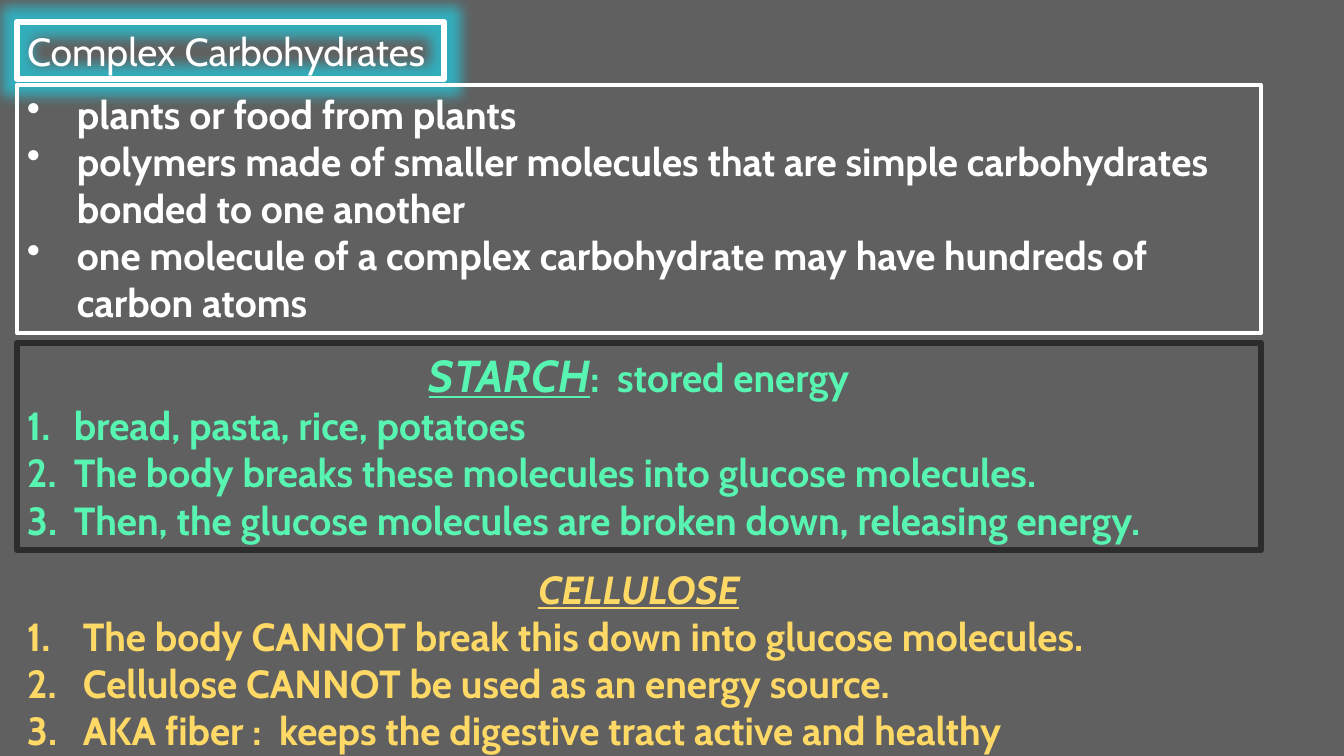
from pptx import Presentation
from pptx.dml.color import RGBColor
from pptx.enum.shapes import MSO_SHAPE as Shape
from pptx.enum.text import MSO_ANCHOR as Anchor, MSO_AUTO_SIZE as AutoSize, PP_ALIGN as Align
from pptx.oxml import parse_xml
from pptx.oxml.ns import nsdecls, qn
from pptx.util import Pt

PX = 12192000 / 1344
WHITE, GREEN, YELLOW = "FFFFFF", "57F5B1", "FFD966"
GREY, DARK, TEAL = "606060", "2C2C2C", "2BBBCC"
LEFT, WIDTH = 17, 1244


def px(value):
    return round(value * PX)


def rgb(value):
    return RGBColor.from_string(value)


class SlideBuilder:
    font = "Cabin"
    size = 28

    def __init__(self, deck):
        self.slide = deck.slides.add_slide(deck.slide_layouts[5])
        fill = self.slide.background.fill
        fill.solid()
        fill.fore_color.rgb = rgb(GREY)

    def outline(self, box, color, width):
        box.fill.background()
        box.line.color.rgb = rgb(color)
        box.line.width = Pt(width)
        box.shadow.inherit = False

    def frame(self, box):
        frame = box.text_frame
        frame.auto_size = AutoSize.NONE
        frame.word_wrap = True
        frame.vertical_anchor = Anchor.TOP
        return frame

    def span(self, para, text, color, size=size, bold=True, accent=False):
        span = para.add_run()
        span.text = text
        font = span.font
        font.name, font.size, font.bold = self.font, Pt(size), bold
        font.italic = font.underline = accent
        font.color.rgb = rgb(color)

    def title(self, text, top, width, height):
        box = self.slide.shapes.title
        box.left, box.top, box.width, box.height = map(px, (LEFT, top, width, height))
        self.outline(box, WHITE, 4.5)
        effects = box.element.spPr.find(qn("a:effectLst"))
        effects.append(parse_xml(
            f'<a:glow {nsdecls("a")} rad="{Pt(18)}"><a:srgbClr val="{TEAL}">'
            '<a:alpha val="85000"/></a:srgbClr></a:glow>'))
        para = self.frame(box).paragraphs[0]
        para.alignment = Align.LEFT
        self.span(para, text, WHITE, bold=False)

    def panel(self, top, height, border=None):
        place = map(px, (LEFT, top, WIDTH, height))
        if border:
            box = self.slide.shapes.add_shape(Shape.RECTANGLE, *place)
            self.outline(box, *border)
        else:
            box = self.slide.shapes.add_textbox(*place)
        return self.frame(box)

    def heading(self, frame, color, word, size=size, rest=""):
        para = frame.paragraphs[0]
        para.alignment = Align.CENTER
        self.span(para, word, color, size, accent=True)
        if rest:
            self.span(para, rest, color)

    def items(self, frame, color, texts, indent, marker):
        for text in texts:
            first = frame.paragraphs[0]
            para = frame.add_paragraph() if first.runs else first
            para.alignment = Align.LEFT
            props = para._p.get_or_add_pPr()
            props.set("marL", str(px(indent)))
            props.set("indent", str(-px(indent)))
            props.append(parse_xml(marker))
            self.span(para, text, color)


BULLET = f'<a:buChar {nsdecls("a")} char="•"/>'
NUMBER = f'<a:buAutoNum {nsdecls("a")} type="arabicPeriod"/>'


def main():
    deck = Presentation()
    deck.slide_width, deck.slide_height = px(1344), px(756)
    page = SlideBuilder(deck)

    page.title("Complex Carbohydrates", 22, 427, 57)

    facts = page.panel(85, 248, (WHITE, 3))
    page.items(facts, WHITE, [
        "plants or food from plants",
        "polymers made of smaller molecules that are simple carbohydrates bonded to one another",
        "one molecule of a complex carbohydrate may have hundreds of carbon atoms",
    ], 50, BULLET)

    starch = page.panel(343, 207, (DARK, 4.5))
    page.heading(starch, GREEN, "STARCH", 32, ":  stored energy")
    page.items(starch, GREEN, [
        "bread, pasta, rice, potatoes",
        "The body breaks these molecules into glucose molecules.",
        "Then, the glucose molecules are broken down, releasing energy.",
    ], 47, NUMBER)

    cellulose = page.panel(560, 196)
    page.heading(cellulose, YELLOW, "CELLULOSE")
    page.items(cellulose, YELLOW, [
        "The body CANNOT break this down into glucose molecules.",
        "Cellulose CANNOT be used as an energy source.",
        "AKA fiber :  keeps the digestive tract active and healthy",
    ], 56, NUMBER)

    deck.save("out.pptx")


if __name__ == "__main__":
    main()
